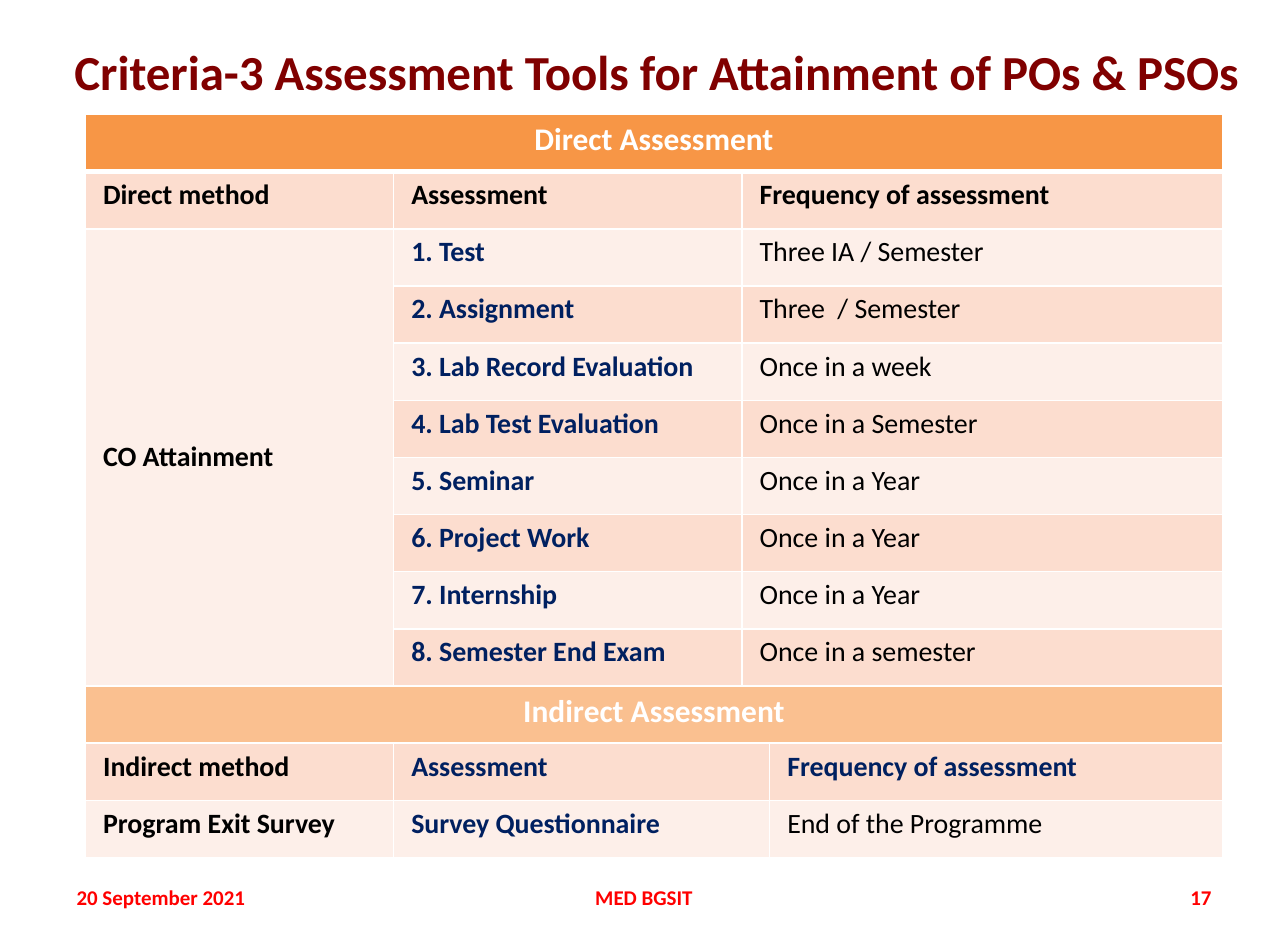
from lxml import etree
from pptx import Presentation
from pptx.dml.color import RGBColor
from pptx.enum import text
from pptx.oxml import ns
from pptx.util import Pt

PX = 9144  # EMU per px, 100 px to the inch
SLIDE = (1024, 748)
FONT = "Calibri"
BLACK, NAVY, WHITE, RED, MAROON = "000000", "002060", "FFFFFF", "FF0000", "800000"
BANDS = ("FDEFE9", "FCDDCF")
LEFT, CENTER, RIGHT = text.PP_ALIGN.LEFT, text.PP_ALIGN.CENTER, text.PP_ALIGN.RIGHT

# Content: text, box, size, colour, alignment
TEXTS = [
    ("Criteria-3 Assessment Tools for Attainment of POs & PSOs", (22, 29, 1000, 55), 28, MAROON, CENTER),
    ("20 September 2021", (51, 693, 239, 40), 12, RED, LEFT),
    ("MED BGSIT", (350, 693, 324, 40), 12, RED, CENTER),
    ("17", (734, 693, 239, 40), 12, RED, RIGHT),
]
TABLE_BOX = (68, 91, 904, 591)
COLUMNS = (245, 277, 22, 360)
DIRECT = [
    ("Direct method", "Assessment", "Frequency of assessment"),
    ("CO Attainment", "1. Test", "Three IA / Semester"),
    ("", "2. Assignment", "Three  / Semester"),
    ("", "3. Lab Record Evaluation", "Once in a week"),
    ("", "4. Lab Test Evaluation", "Once in a Semester"),
    ("", "5. Seminar", "Once in a Year"),
    ("", "6. Project Work", "Once in a Year"),
    ("", "7. Internship", "Once in a Year"),
    ("", "8. Semester End Exam", "Once in a semester"),
]
INDIRECT = [
    ("Indirect method", "Assessment", "Frequency of assessment"),
    ("Program Exit Survey", "Survey Questionnaire", "End of the Programme"),
]
# Section: title, title fill, rows, first grid column of each cell, heading colours
SECTIONS = [
    ("Direct Assessment", "F79646", DIRECT, (0, 1, 2), (BLACK, BLACK, BLACK)),
    ("Indirect Assessment", "FAC090", INDIRECT, (0, 1, 3), (BLACK, NAVY, NAVY)),
]


def rgb(value):
    return RGBColor.from_string(value)


def px(*values):
    return [round(v * PX) for v in values]


def write(tf, words, size, color, align=LEFT, bold=True):
    p = tf.paragraphs[0]
    p.text = words
    p.alignment = align
    p.font.name, p.font.size, p.font.bold = FONT, Pt(size), bold
    p.font.color.rgb = rgb(color)


def add_borders(cell, top, bottom):
    tc_pr = cell._tc.get_or_add_tcPr()
    for i, (side, width) in enumerate((("L", 1), ("R", 1), ("T", top), ("B", bottom))):
        ln = etree.Element(ns.qn(f"a:ln{side}"), w=str(Pt(width)))
        fill = etree.SubElement(ln, ns.qn("a:solidFill"))
        etree.SubElement(fill, ns.qn("a:srgbClr"), val=WHITE)
        tc_pr.insert(i, ln)


prs = Presentation()
prs.slide_width, prs.slide_height = px(*SLIDE)
s = prs.slides.add_slide(prs.slide_layouts[6])

# Title and footer
for words, box, size, color, align in TEXTS:
    tf = s.shapes.add_textbox(*px(*box)).text_frame
    tf.word_wrap = True
    tf.vertical_anchor = text.MSO_ANCHOR.MIDDLE
    write(tf, words, size, color, align)

# Table grid with banded rows
row_count = sum(1 + len(section[2]) for section in SECTIONS)
table = s.shapes.add_table(row_count, len(COLUMNS), *px(*TABLE_BOX)).table
for column, width in zip(table.columns, px(*COLUMNS)):
    column.width = width
for r, row in enumerate(table.rows):
    row.height = round(TABLE_BOX[3] * PX / row_count)
    for cell in row.cells:
        cell.fill.solid()
        cell.fill.fore_color.rgb = rgb(BANDS[r % 2])
        cell.margin_left = cell.margin_right = px(14)[0]
        cell.margin_top = cell.margin_bottom = px(5)[0]
        add_borders(cell, 3 if r == 1 else 1, 3 if r == 0 else 1)

# Sections: a full-width title, a heading row, then the body
r = 0
last = len(COLUMNS) - 1
for title, fill, rows, starts, head_colors in SECTIONS:
    cell = table.cell(r, 0)
    cell.merge(table.cell(r, last))
    cell.fill.fore_color.rgb = rgb(fill)
    write(cell.text_frame, title, 18, WHITE, CENTER)
    ends = [start - 1 for start in starts[1:]] + [last]
    for i, row in enumerate(rows):
        r += 1
        colors = (BLACK, NAVY, BLACK) if i else head_colors
        for k, words in enumerate(row):
            cell = table.cell(r, starts[k])
            if starts[k] < ends[k]:
                cell.merge(table.cell(r, ends[k]))
            if words:
                write(cell.text_frame, words, 16, colors[k], bold=i == 0 or k < 2)
    r += 1

# One method covers all direct tools
co_cell = table.cell(2, 0)
co_cell.merge(table.cell(len(DIRECT), 0))
co_cell.vertical_anchor = text.MSO_ANCHOR.MIDDLE

prs.save("out.pptx")
